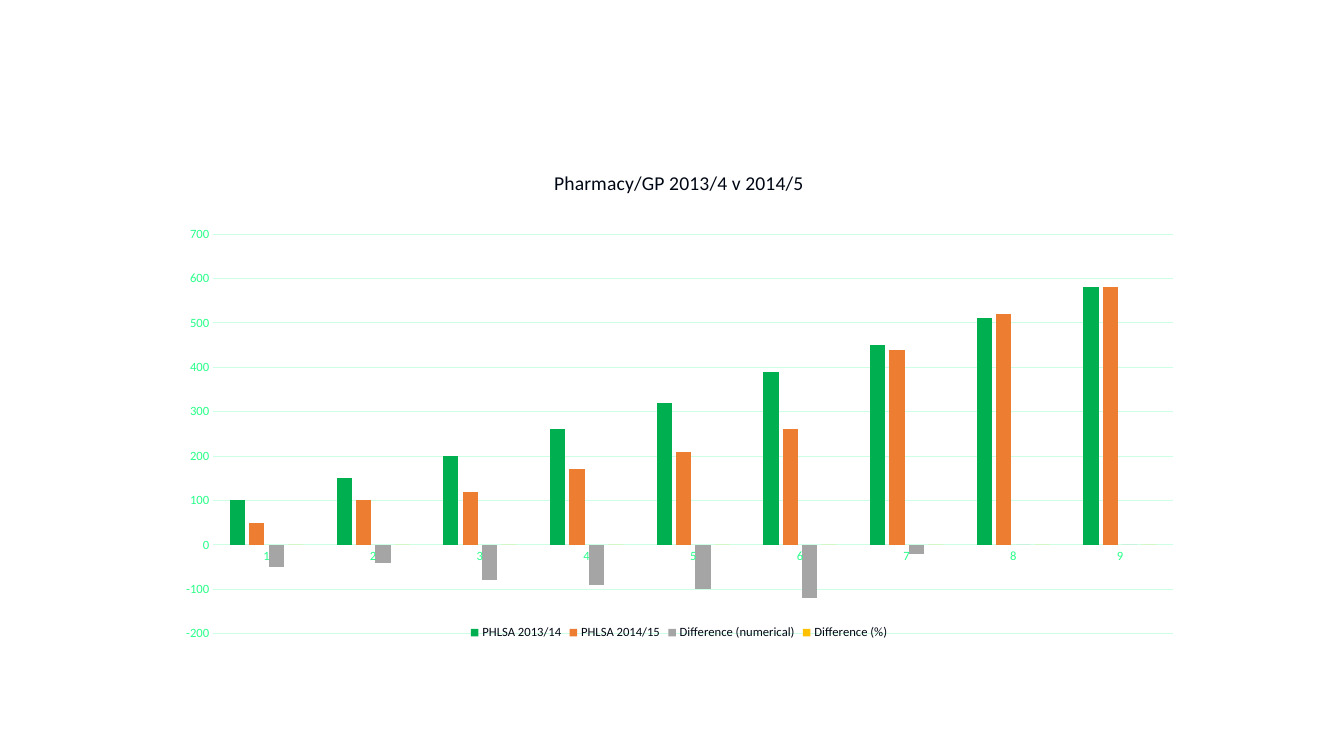
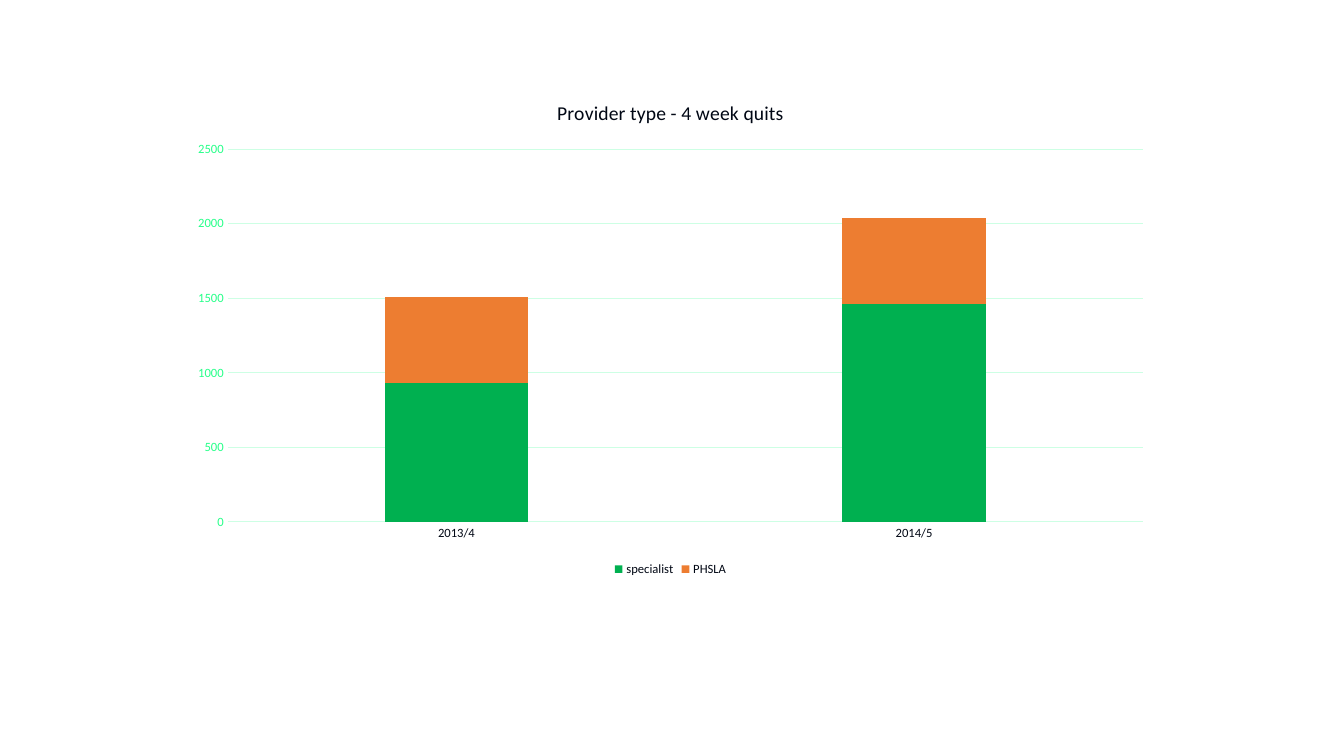
from pptx import Presentation
from pptx import util as u
from pptx.chart.data import CategoryChartData
from pptx.dml.color import RGBColor
from pptx.enum import chart as ch
from pptx.oxml import parse_xml
from pptx.oxml.ns import nsdecls, qn

PX = u.Inches(1) // 100  # 100 px to the inch
FONT = "Calibri"
COLORS = {
    "ink": "000714",
    "label": "26FF89",
    "grid": "CDFFE4",
    "green": "00B050",
    "orange": "ED7D31",
    "grey": "A5A5A5",
    "yellow": "FFC000",
}


def style_font(font, size, color):
    font.name = FONT
    font.size = u.Pt(size)
    font.bold = False
    font.color.rgb = RGBColor.from_string(COLORS[color])


def style_line(line, color):
    line.color.rgb = RGBColor.from_string(COLORS[color])
    line.width = u.Pt(0.75)


# What differs between the two chart slides
charts = [
    {
        "title": "Pharmacy/GP 2013/4 v 2014/5",
        "box": (168, 149, 1011, 490),
        "type": ch.XL_CHART_TYPE.COLUMN_CLUSTERED,
        "overlap": -27,
        "scale": (-200, 700, 100),
        "category_color": "label",
        "plot_area": {"x": 0.043, "y": 0.17, "w": 0.942, "h": 0.809},
        "categories": [str(number) for number in range(1, 10)],
        "series": [
            ("PHLSA 2013/14", "green", [100, 150, 200, 260, 320, 390, 450, 510, 580]),
            ("PHLSA 2014/15", "orange", [50, 100, 120, 170, 210, 260, 440, 520, 580]),
            ("Difference (numerical)", "grey", [-50, -40, -80, -90, -100, -120, -20, 0, 0]),
            ("Difference (%)", "yellow", [0] * 9),
        ],
    },
    {
        "title": "Provider type - 4 week quits",
        "box": (177, 80, 976, 496),
        "type": ch.XL_CHART_TYPE.COLUMN_STACKED,
        "overlap": 100,
        "scale": (0, 2500, 500),
        "category_color": "ink",
        "plot_area": None,
        "categories": ["2013/4", "2014/5"],
        "series": [
            ("specialist", "green", [930, 1460]),
            ("PHSLA", "orange", [580, 580]),
        ],
    },
]

presentation = Presentation()
presentation.slide_width = u.Inches(13.33)
presentation.slide_height = u.Inches(7.5)

for details in charts:
    slide = presentation.slides.add_slide(presentation.slide_layouts[6])

    # Chart and data
    data = CategoryChartData()
    data.categories = details["categories"]
    for name, color, values in details["series"]:
        data.add_series(name, values)
    box = [length * PX for length in details["box"]]
    chart = slide.shapes.add_chart(details["type"], *box, data).chart
    style_font(chart.font, 10, "green")

    # Title
    chart.has_title = True
    chart.chart_title.include_in_layout = False
    title_frame = chart.chart_title.text_frame
    title_frame.text = details["title"]
    style_font(title_frame.paragraphs[0].runs[0].font, 14, "ink")

    # Legend
    chart.has_legend = True
    chart.legend.position = ch.XL_LEGEND_POSITION.BOTTOM
    chart.legend.include_in_layout = False
    style_font(chart.legend.font, 9, "ink")

    # Columns
    plot = chart.plots[0]
    plot.gap_width = 219
    plot.overlap = details["overlap"]
    plot.vary_by_categories = False
    for series, (name, color, values) in zip(plot.series, details["series"]):
        series.invert_if_negative = False
        series.format.fill.solid()
        series.format.fill.fore_color.rgb = RGBColor.from_string(COLORS[color])

    # Axes
    category_axis, value_axis = chart.category_axis, chart.value_axis
    for axis, color in ((category_axis, details["category_color"]), (value_axis, "label")):
        axis.major_tick_mark = ch.XL_TICK_MARK.NONE
        axis.minor_tick_mark = ch.XL_TICK_MARK.NONE
        style_font(axis.tick_labels.font, 9, color)
    style_line(category_axis.format.line, "grid")
    value_axis.format.line.fill.background()
    value_axis.has_major_gridlines = True
    style_line(value_axis.major_gridlines.format.line, "grid")
    value_axis.minimum_scale, value_axis.maximum_scale, value_axis.major_unit = details["scale"]

    # Fixed inner plot area
    if details["plot_area"]:
        plot_area = chart.element.find(".//" + qn("c:plotArea"))
        for layout in plot_area.findall(qn("c:layout")):
            plot_area.remove(layout)
        modes = '<c:xMode val="edge"/><c:yMode val="edge"/>'
        sizes = "".join(f'<c:{key} val="{value}"/>' for key, value in details["plot_area"].items())
        plot_area.insert(0, parse_xml(
            f'<c:layout {nsdecls("c")}><c:manualLayout><c:layoutTarget val="inner"/>'
            f"{modes}{sizes}</c:manualLayout></c:layout>"
        ))

presentation.save("out.pptx")
